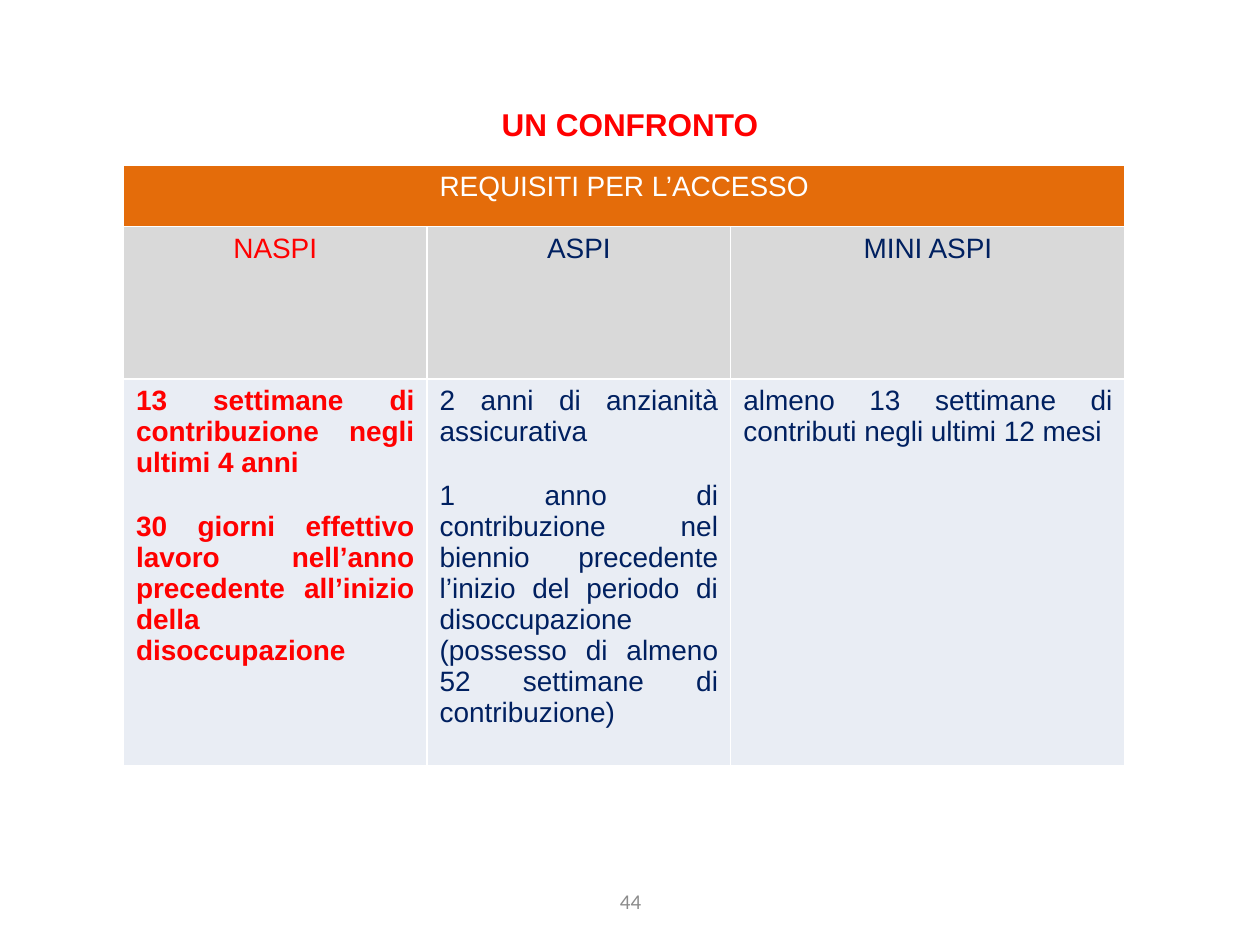
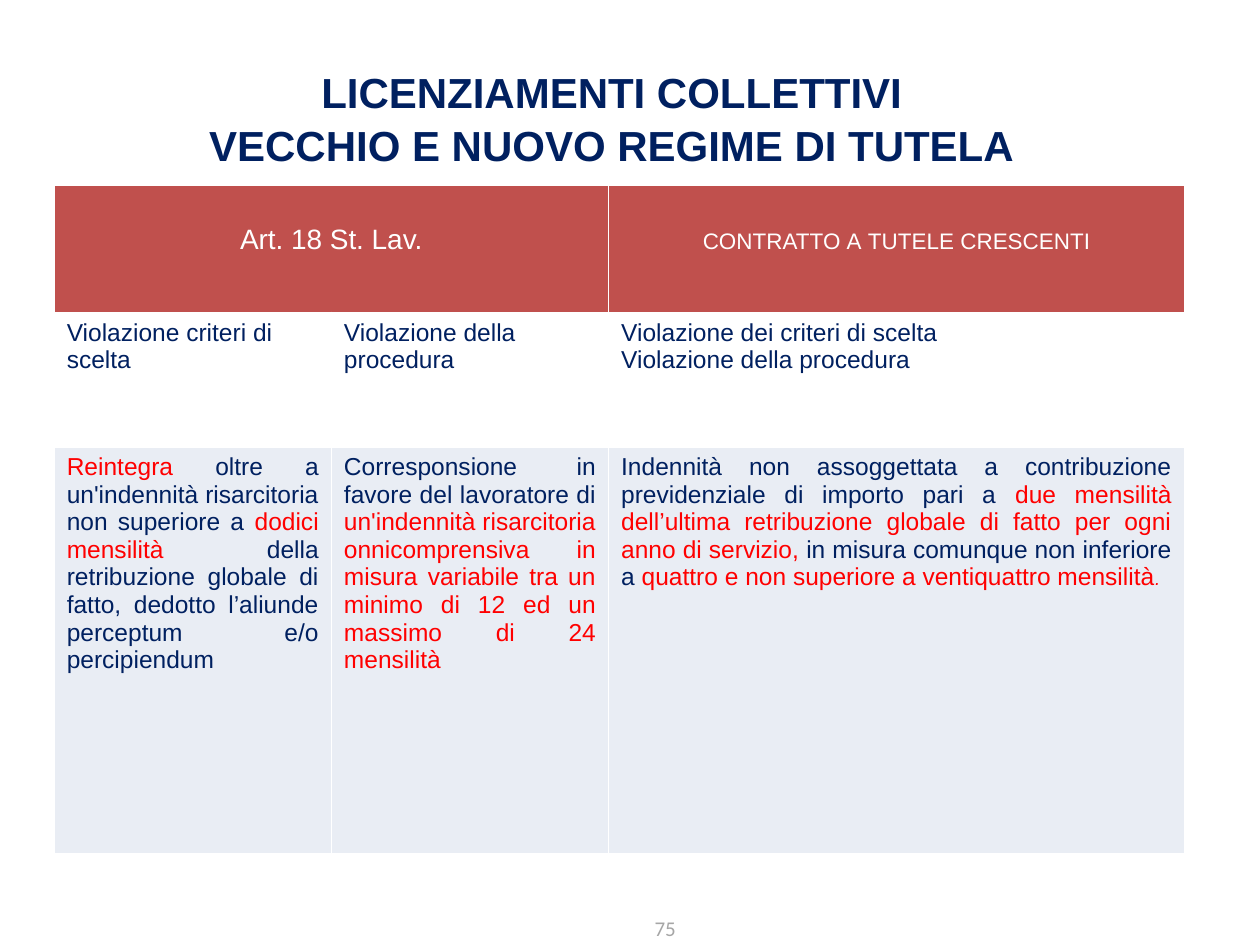
from pptx import Presentation
from pptx.dml.color import RGBColor
from pptx.enum.text import MSO_ANCHOR, PP_ALIGN
from pptx.oxml import parse_xml
from pptx.oxml.ns import nsdecls
from pptx.util import Inches, Pt

LEFT, CENTER, JUSTIFY = PP_ALIGN.LEFT, PP_ALIGN.CENTER, PP_ALIGN.JUSTIFY
MIDDLE = MSO_ANCHOR.MIDDLE

COLORS = {
    "white": "FFFFFF", "navy": "002060", "red": "FF0000",
    "orange": "E46C0A", "brick": "C0504D", "grey": "D9D9D9", "pale": "E9EDF4",
    "page_dark": "8C8C8C", "page_light": "A6A6A6",
}
TEXT_FONT, PAGE_FONT = "Arial", "Calibri"


def part(text, color="navy", **style):
    return {"text": text, "color": color, **style}


SLIDES = [
    {
        "title": {"lines": ["UN CONFRONTO"], "size": 18, "color": "red",
                  "box": (0.5, 0.77, 9, 0.47)},
        "page": {"number": "44", "color": "page_dark", "box": (3.42, 6.95, 3.17, 0.4)},
        "table": {
            "corner": (0.98, 1.31), "columns": (2.41, 2.41, 3.13),
            "merge": (0, 2),
            "rows": [
                {"height": 0.49, "fill": "orange", "size": 16, "align": CENTER,
                 "cells": [[[part("REQUISITI PER L’ACCESSO", "white")]], None, None]},
                {"height": 1.21, "fill": "grey", "size": 16, "align": CENTER,
                 "cells": [[[part("NASPI", "red")]], [[part("ASPI")]], [[part("MINI ASPI")]]]},
                {"height": 3.07, "fill": "pale", "size": 16, "align": JUSTIFY, "gap": 18.4,
                 "cells": [
                     [[part("13 settimane di contribuzione negli ultimi 4 anni", "red", bold=True)],
                      [part("30 giorni effettivo lavoro nell’anno precedente all’inizio "
                            "della disoccupazione", "red", bold=True)]],
                     [[part("2 anni di anzianità assicurativa")],
                      [part("1 anno di contribuzione nel biennio precedente l’inizio del periodo "
                            "di disoccupazione (possesso di almeno 52 settimane di contribuzione)")]],
                     [[part("almeno 13 settimane di contributi negli ultimi 12 mesi")]],
                 ]},
            ],
        },
    },
    {
        "title": {"lines": ["LICENZIAMENTI COLLETTIVI", "VECCHIO E NUOVO REGIME DI TUTELA"],
                  "size": 24, "color": "navy", "box": (0.28, 0.46, 9.15, 1)},
        "page": {"number": "75", "color": "page_light", "box": (4.78, 7.27, 1, 0.2)},
        "table": {
            "corner": (0.43, 1.47), "columns": (2.2, 2.2, 4.57),
            "merge": (0, 1),
            "rows": [
                {"height": 1.01, "fill": "brick", "size": 16, "align": CENTER, "top": 0.31,
                 "cells": [[[part("Art. 18 St. Lav.", "white")]], None,
                           [[part("contratto a tutele crescenti", "white", small_caps=True)]]]},
                {"height": 1.07, "fill": "white", "size": 14, "align": LEFT,
                 "cells": [
                     [[part("Violazione criteri di scelta")]],
                     [[part("Violazione della procedura")]],
                     [[part("Violazione dei criteri di scelta")],
                      [part("Violazione della procedura")]],
                 ]},
                {"height": 3.23, "fill": "pale", "size": 14, "align": JUSTIFY,
                 "cells": [
                     [[part("Reintegra ", "red"),
                       part("oltre a un'indennità risarcitoria non superiore a "),
                       part("dodici mensilità ", "red"),
                       part("della retribuzione globale di fatto, dedotto l’aliunde "
                            "perceptum e/o percipiendum")]],
                     [[part("Corresponsione in favore del lavoratore di "),
                       part("un'indennità risarcitoria onnicomprensiva in misura variabile "
                            "tra un minimo di 12 ed un massimo di 24 mensilità", "red")]],
                     [[part("Indennità non assoggettata a contribuzione previdenziale "
                            "di importo pari a "),
                       part("due mensilità dell’ultima retribuzione globale di fatto "
                            "per ogni anno di servizio, ", "red"),
                       part("in misura comunque non inferiore a "),
                       part("quattro e non superiore a ventiquattro mensilità", "red"),
                       part(".", "red", size=10.5, italic=True)]],
                 ]},
            ],
        },
    },
]


def rgb(name):
    return RGBColor.from_string(COLORS[name])


def format_run(run, size, color, font=TEXT_FONT, bold=False, italic=False):
    run.font.name = font
    run.font.size = Pt(size)
    run.font.bold = bold
    run.font.italic = italic
    run.font.color.rgb = rgb(color)


def add_lines(slide, box, lines, size, color, font=TEXT_FONT, bold=False):
    frame = slide.shapes.add_textbox(*map(Inches, box)).text_frame
    frame.word_wrap = True
    frame.text = "\n".join(lines)
    for paragraph in frame.paragraphs:
        paragraph.alignment = CENTER
        format_run(paragraph.runs[0], size, color, font, bold)
    return frame


def add_title(slide, title):
    frame = add_lines(slide, title["box"], title["lines"], title["size"], title["color"], bold=True)
    for paragraph in frame.paragraphs:
        paragraph.line_spacing = 1.05


def add_page_number(slide, page):
    frame = add_lines(slide, page["box"], [page["number"]], 12, page["color"], PAGE_FONT)
    frame.margin_top = frame.margin_bottom = 0
    frame.vertical_anchor = MIDDLE


def style_cell(cell, fill):
    properties = cell._tc.get_or_add_tcPr()
    for side in ("lnL", "lnR", "lnT", "lnB"):
        properties.append(parse_xml(
            f'<a:{side} {nsdecls("a")} w="12700"><a:solidFill>'
            f'<a:srgbClr val="{COLORS["white"]}"/></a:solidFill></a:{side}>'))
    cell.fill.solid()
    cell.fill.fore_color.rgb = rgb(fill)


def fill_cell(cell, paragraphs, row):
    cell.margin_top = Inches(row.get("top", 0.05))
    frame = cell.text_frame
    for index, parts in enumerate(paragraphs):
        paragraph = frame.add_paragraph() if index else frame.paragraphs[0]
        paragraph.alignment = row["align"]
        if index:
            paragraph.space_before = Pt(row.get("gap", 0))
        for piece in parts:
            run = paragraph.add_run()
            run.text = piece["text"]
            format_run(run, piece.get("size", row["size"]), piece["color"],
                       bold=piece.get("bold", False), italic=piece.get("italic", False))
            if piece.get("small_caps"):
                run.font._element.set("cap", "small")


def add_comparison(slide, comparison):
    rows, columns = comparison["rows"], comparison["columns"]
    size = sum(columns), sum(row["height"] for row in rows)
    table = slide.shapes.add_table(
        len(rows), len(columns), *map(Inches, comparison["corner"] + size)).table
    table.first_row = table.horz_banding = False
    for column, width in zip(table.columns, columns):
        column.width = Inches(width)
    first, last = comparison["merge"]
    table.cell(0, first).merge(table.cell(0, last))
    for r, row in enumerate(rows):
        table.rows[r].height = Inches(row["height"])
        for c, paragraphs in enumerate(row["cells"]):
            cell = table.cell(r, c)
            style_cell(cell, row["fill"])
            if paragraphs:
                fill_cell(cell, paragraphs, row)


def main():
    deck = Presentation()
    deck.slide_width, deck.slide_height = Inches(10), Inches(7.5)
    for content in SLIDES:
        slide = deck.slides.add_slide(deck.slide_layouts[6])
        add_title(slide, content["title"])
        add_comparison(slide, content["table"])
        add_page_number(slide, content["page"])
    deck.save("out.pptx")


if __name__ == "__main__":
    main()
